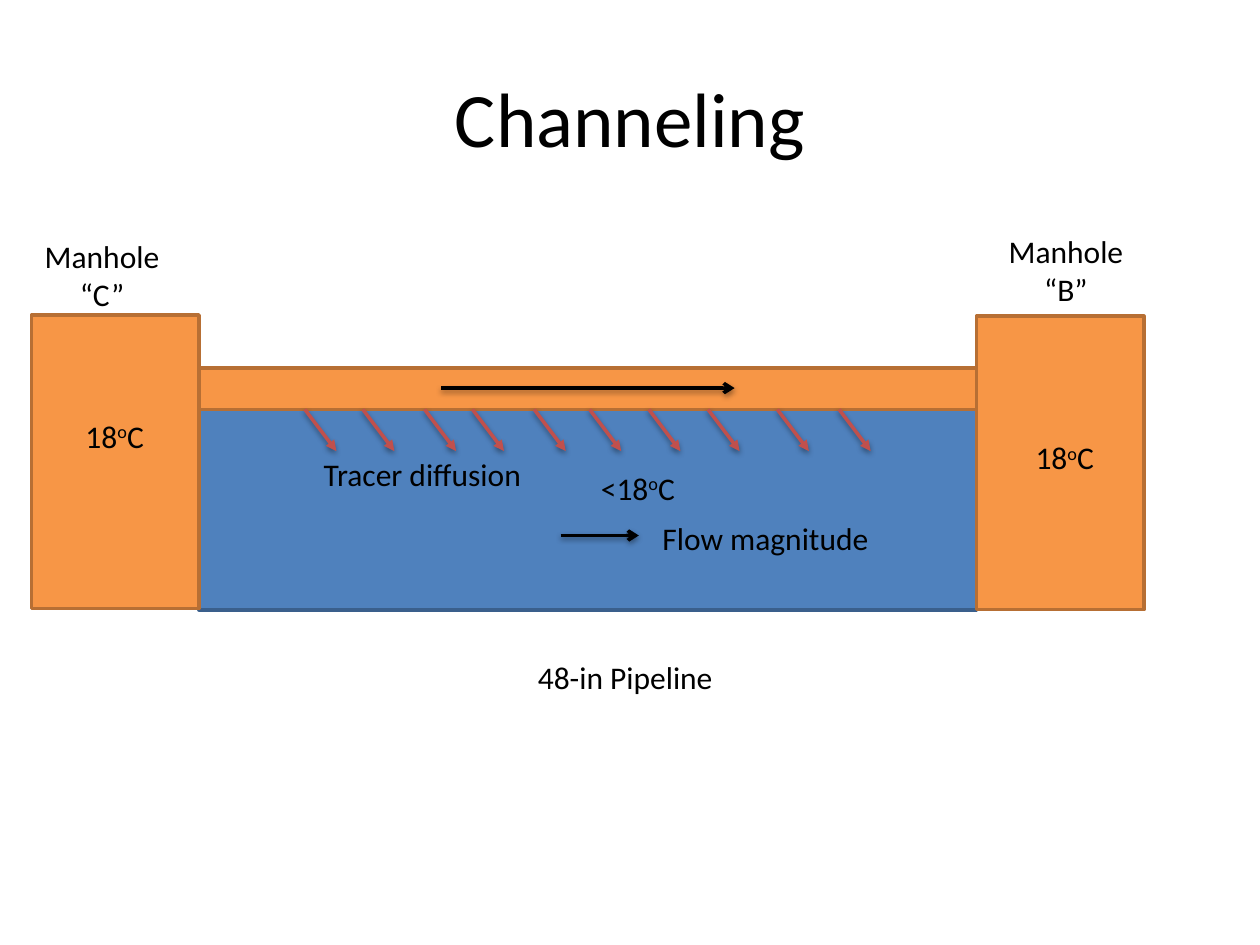
"""Build the slide on tracer channeling between two manholes."""
from pptx import Presentation
from pptx.dml.color import RGBColor
from pptx.enum.shapes import MSO_CONNECTOR as Connector, MSO_SHAPE as Shape
from pptx.enum.text import MSO_ANCHOR as Anchor, MSO_AUTO_SIZE as AutoSize, PP_ALIGN as Align
from pptx.oxml import parse_xml
from pptx.oxml.ns import nsdecls
from pptx.util import Inches, Pt

BLACK, RED = "000000", "C0504D"
WATER = ("4F81BD", "3A5F8C")
TRACER = ("F79646", "B76F34")


def color(hex_value):
    return RGBColor.from_string(hex_value)


def add_run(paragraph, text, size=18):
    run = paragraph.add_run()
    run.text = text
    run.font.name = "Calibri"
    run.font.size = Pt(size)
    run.font.color.rgb = color(BLACK)
    return run


presentation = Presentation()
presentation.slide_width, presentation.slide_height = Inches(10), Inches(7.5)
slide = presentation.slides.add_slide(presentation.slide_layouts[5])

title = slide.shapes.title
title.left, title.top, title.width, title.height = map(Inches, (0.5, 0.3, 9, 1.25))
title.text_frame.vertical_anchor = Anchor.MIDDLE
title_paragraph = title.text_frame.paragraphs[0]
title_paragraph.alignment = Align.CENTER
add_run(title_paragraph, "Channeling", 44)

rectangles = [
    (1.58, 2.92, 6.17, 1.92, WATER),
    (0.25, 2.5, 1.33, 2.33, TRACER),
    (1.58, 2.92, 6.17, 0.33, TRACER),
    (7.75, 2.51, 1.33, 2.33, TRACER),
]
for left, top, width, height, (fill, outline) in rectangles:
    shape = slide.shapes.add_shape(
        Shape.RECTANGLE, Inches(left), Inches(top), Inches(width), Inches(height))
    shape.shadow.inherit = False
    shape.fill.solid()
    shape.fill.fore_color.rgb = color(fill)
    shape.line.color.rgb = color(outline)
    shape.line.width = Pt(2)

diffusion_starts = [2.42, 2.88, 3.37, 3.75, 4.24, 4.68, 5.15, 5.62, 6.17, 6.66]
arrows = [(3.5, 3.08, 5.83, 3.08, BLACK, "arrow")]
arrows += [(x, 3.25, x + 0.25, 3.58, RED, "triangle") for x in diffusion_starts]
arrows += [(4.45, 4.25, 5.07, 4.25, BLACK, "arrow")]
for start_x, start_y, end_x, end_y, line_color, head in arrows:
    arrow = slide.shapes.add_connector(
        Connector.STRAIGHT, Inches(start_x), Inches(start_y), Inches(end_x), Inches(end_y))
    arrow.line.color.rgb = color(line_color)
    arrow.line.width = Pt(2)
    arrow.line._get_or_add_ln().append(
        parse_xml(f'<a:tailEnd {nsdecls("a")} type="{head}"/>'))

labels = [
    (0.25, 1.83, 1.12, 0.71, Align.CENTER, [["Manhole"], ["“C”"]]),
    (7.9, 1.79, 1.12, 0.71, Align.CENTER, [["Manhole"], ["“B”"]]),
    (0.58, 3.26, 0.68, 0.4, Align.LEFT, [["18", "o", "C"]]),
    (8.12, 3.43, 0.68, 0.4, Align.LEFT, [["18", "o", "C"]]),
    (4.67, 3.67, 0.81, 0.4, Align.LEFT, [["<18", "o", "C"]]),
    (2.47, 3.56, 1.79, 0.4, Align.LEFT, [["Tracer diffusion"]]),
    (5.16, 4.07, 1.86, 0.4, Align.LEFT, [["Flow magnitude"]]),
    (4.17, 5.17, 1.61, 0.4, Align.LEFT, [["48-in Pipeline"]]),
]
for left, top, width, height, alignment, lines in labels:
    label = slide.shapes.add_textbox(Inches(left), Inches(top), Inches(width), Inches(height))
    frame = label.text_frame
    frame.word_wrap = False
    frame.auto_size = AutoSize.SHAPE_TO_FIT_TEXT
    for index, texts in enumerate(lines):
        paragraph = frame.add_paragraph() if index else frame.paragraphs[0]
        paragraph.alignment = alignment
        for text in texts:
            run = add_run(paragraph, text)
            if text == "o":
                run.font._element.set("baseline", "30000")

presentation.save("out.pptx")
